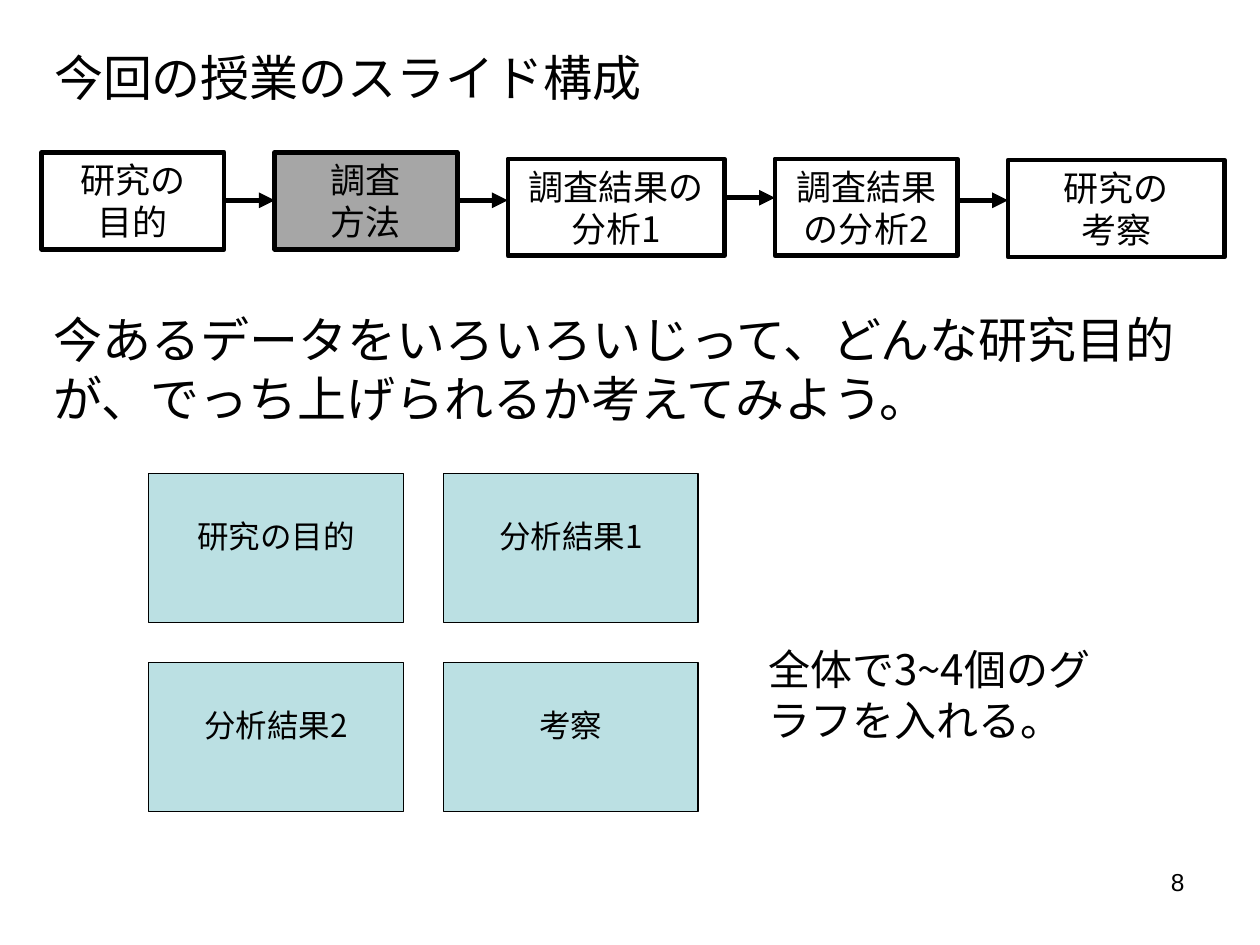
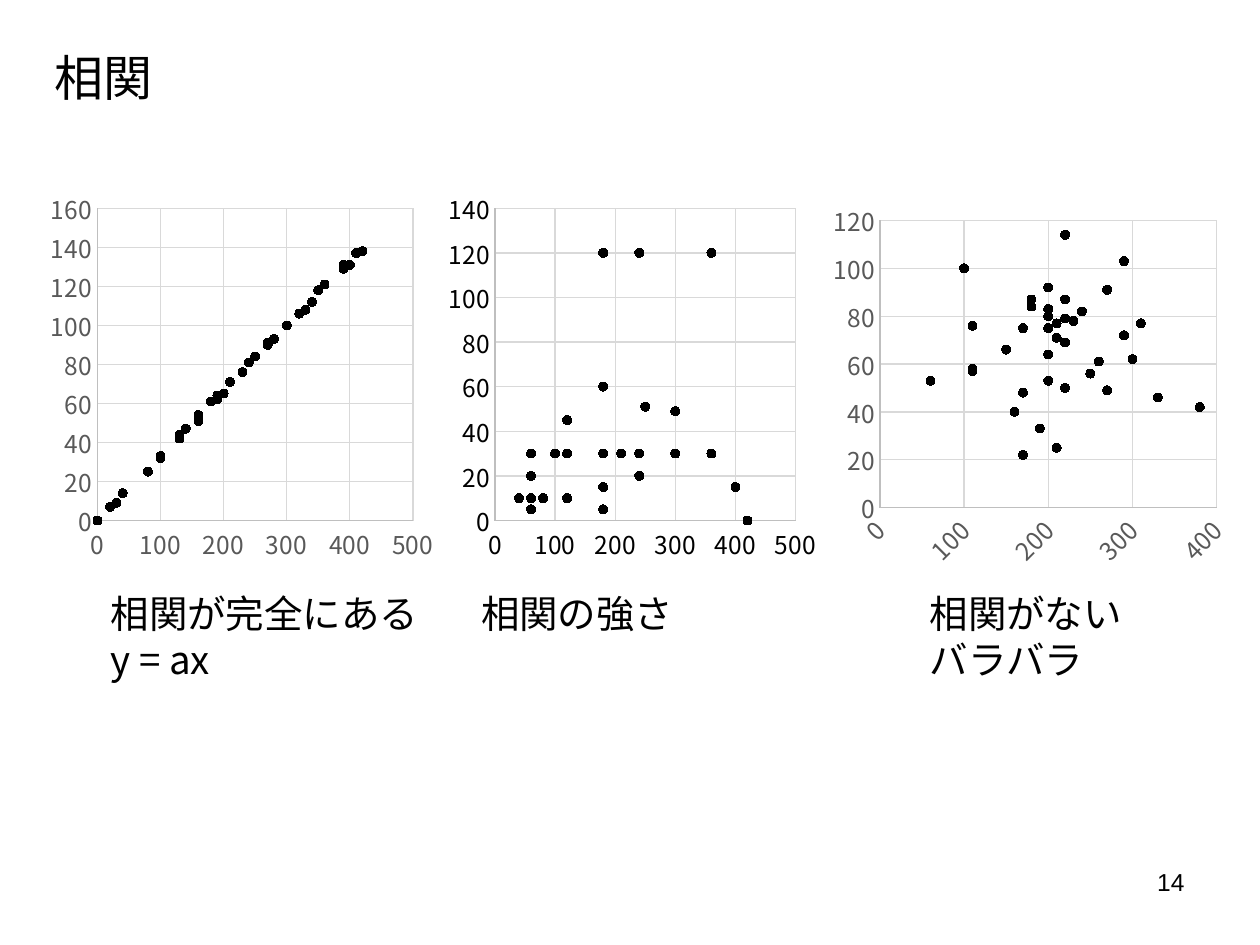
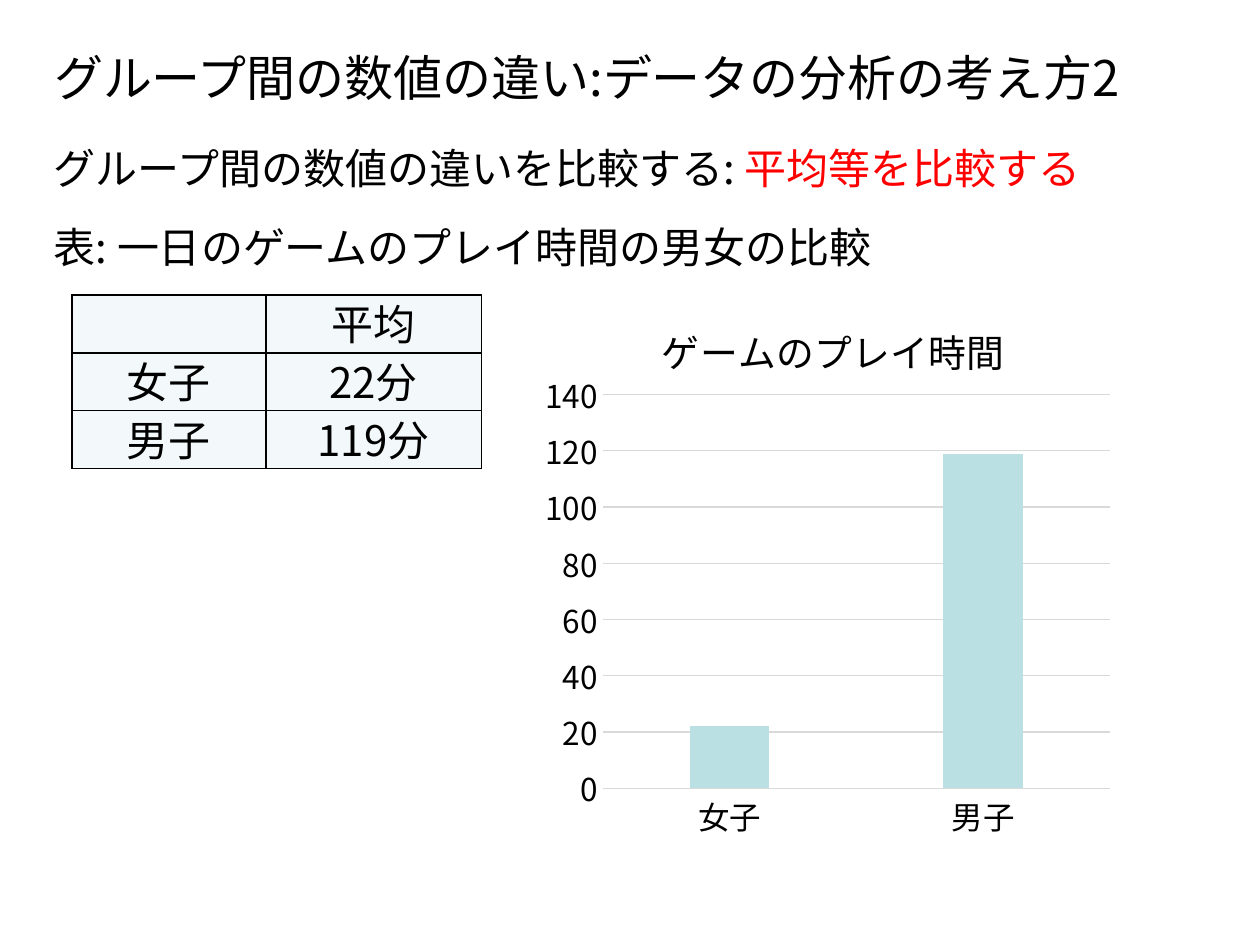
from lxml.etree import SubElement
from pptx import Presentation
from pptx.chart.data import CategoryChartData, XyChartData
from pptx.dml.color import RGBColor
from pptx.enum.chart import XL_CHART_TYPE, XL_MARKER_STYLE, XL_TICK_MARK
from pptx.enum.shapes import MSO_CONNECTOR, MSO_SHAPE
from pptx.enum.text import MSO_ANCHOR, MSO_AUTO_SIZE, PP_ALIGN
from pptx.oxml.ns import qn
from pptx.util import Inches, Pt

COLORS = {
    "ink": "000000",
    "red": "FF0000",
    "teal": "BBE0E3",
    "pale": "F3F9FA",
    "current": "A6A6A6",
    "label": "595959",
    "axis": "BFBFBF",
    "grid": "D9D9D9",
}
FONT = "Noto Sans CJK JP"
NUMBER_FONT = "Arial"
LINE_HEIGHT = 1.2
MARGIN = 0.33


def rgb(name):
    return RGBColor.from_string(COLORS[name])


def add_east_asian_fonts(element):
    """Give each Latin font in the element the same East Asian font."""
    for latin in list(element.iter(qn("a:latin"))):
        properties = latin.getparent()
        if properties.find(qn("a:ea")) is None:
            east_asian = SubElement(properties, qn("a:ea"))
            east_asian.set("typeface", latin.get("typeface"))
            latin.addnext(east_asian)


def set_layout(parent, x, y, width=None, height=None):
    """Place a chart part by fractions of the chart area."""
    for old in parent.findall(qn("c:layout")):
        parent.remove(old)
    layout = SubElement(parent, qn("c:layout"))
    manual = SubElement(layout, qn("c:manualLayout"))
    values = [("xMode", "edge"), ("yMode", "edge"), ("x", x), ("y", y)]
    if width is not None:
        values = [("layoutTarget", "inner")] + values + [("w", width), ("h", height)]
    for tag, value in values:
        SubElement(manual, qn("c:" + tag)).set("val", str(value))
    text = parent.find(qn("c:tx"))
    if text is None:
        parent.insert(0, layout)
    else:
        text.addnext(layout)


class Deck:
    def __init__(self):
        self.presentation = Presentation()
        self.presentation.slide_width = Inches(10)
        self.presentation.slide_height = Inches(7.5)
        self.slide = None

    def add_slide(self, title, number=None):
        self.slide = self.presentation.slides.add_slide(
            self.presentation.slide_layouts[5])
        shape = self.slide.shapes.title
        shape.left, shape.top = Inches(MARGIN), Inches(MARGIN)
        shape.width, shape.height = Inches(10), Inches(0.57)
        self.fill_frame(shape.text_frame, [title], 28)
        if number:
            self.text(7.17, 6.83, 2.33, 0.52, [number], 14,
                      align=PP_ALIGN.RIGHT, font=NUMBER_FONT)

    def style_font(self, font, size, color="ink", name=FONT):
        font.size = Pt(size)
        font.name = name
        font.color.rgb = rgb(color)

    def style_paragraph(self, paragraph, size, align, font=FONT):
        paragraph.alignment = align
        paragraph.line_spacing = Pt(size * LINE_HEIGHT)
        self.style_font(paragraph.font, size, name=font)
        add_east_asian_fonts(paragraph._p)

    def fill_frame(self, frame, lines, size, align=PP_ALIGN.LEFT,
                   anchor=MSO_ANCHOR.TOP, font=FONT):
        frame.word_wrap = True
        frame.auto_size = MSO_AUTO_SIZE.NONE
        frame.vertical_anchor = anchor
        for index, line in enumerate(lines):
            paragraph = frame.paragraphs[0] if index == 0 else frame.add_paragraph()
            paragraph.text = line
            self.style_paragraph(paragraph, size, align, font)

    def text(self, left, top, width, height, lines, size,
             align=PP_ALIGN.LEFT, font=FONT):
        shape = self.slide.shapes.add_textbox(
            Inches(left), Inches(top), Inches(width), Inches(height))
        self.fill_frame(shape.text_frame, lines, size, align, font=font)
        return shape.text_frame.paragraphs[0]

    def box(self, left, top, width, height, text, size, fill, line_width,
            anchor=MSO_ANCHOR.MIDDLE):
        shape = self.slide.shapes.add_shape(
            MSO_SHAPE.RECTANGLE, Inches(left), Inches(top),
            Inches(width), Inches(height))
        shape.shadow.inherit = False
        if fill:
            shape.fill.solid()
            shape.fill.fore_color.rgb = rgb(fill)
        else:
            shape.fill.background()
        shape.line.color.rgb = rgb("ink")
        shape.line.width = Pt(line_width)
        self.fill_frame(shape.text_frame, [text], size, PP_ALIGN.CENTER, anchor)
        return shape

    def arrow(self, start, end, y):
        connector = self.slide.shapes.add_connector(
            MSO_CONNECTOR.STRAIGHT, Inches(start), Inches(y), Inches(end), Inches(y))
        connector.line.color.rgb = rgb("ink")
        connector.line.width = Pt(3)
        SubElement(connector.line._get_or_add_ln(), qn("a:tailEnd")).set("type", "triangle")
        SubElement(connector._element.spPr, qn("a:effectLst"))

    def table(self, left, top, widths, row_height, rows):
        table = self.slide.shapes.add_table(
            len(rows), len(widths), Inches(left), Inches(top),
            Inches(sum(widths)), Inches(row_height * len(rows))).table
        for column, width in zip(table.columns, widths):
            column.width = Inches(width)
        for row_index, row in enumerate(rows):
            table.rows[row_index].height = Inches(row_height)
            for column_index, text in enumerate(row):
                self.cell(table.cell(row_index, column_index), text)

    def cell(self, cell, text):
        cell.margin_left = cell.margin_right = cell.margin_top = Inches(0.01)
        cell.margin_bottom = 0
        cell.vertical_anchor = MSO_ANCHOR.BOTTOM
        if text:
            paragraph = cell.text_frame.paragraphs[0]
            paragraph.text = text
            self.style_paragraph(paragraph, 24, PP_ALIGN.CENTER)
        properties = cell._tc.get_or_add_tcPr()
        for side in ("lnL", "lnR", "lnT", "lnB"):
            border = SubElement(properties, qn("a:" + side), w=str(Pt(1)))
            solid = SubElement(border, qn("a:solidFill"))
            SubElement(solid, qn("a:srgbClr"), val=COLORS["ink"])
        cell.fill.solid()
        cell.fill.fore_color.rgb = rgb("pale")

    def chart(self, kind, data, place, plot, size):
        chart = self.slide.shapes.add_chart(
            kind, *[Inches(length) for length in place], data).chart
        chart.has_legend = False
        chart.has_title = False
        self.style_font(chart.font, size)
        chart.plots[0].vary_by_categories = False
        set_layout(chart._chartSpace.chart.plotArea, *plot)
        return chart

    def axis(self, axis, size, label_color="ink", line=None, grid=True, angle=0):
        axis.major_tick_mark = axis.minor_tick_mark = XL_TICK_MARK.NONE
        self.style_font(axis.tick_labels.font, size, label_color)
        # Label angles are counted in 60000ths of a degree
        axis._element.txPr.bodyPr.set("rot", str(angle * 60000))
        if line:
            axis.format.line.color.rgb = rgb(line)
            axis.format.line.width = Pt(0.75)
        else:
            axis.format.line.fill.background()
        axis.has_major_gridlines = grid
        if grid:
            axis.major_gridlines.format.line.color.rgb = rgb("grid")
            axis.major_gridlines.format.line.width = Pt(0.75)

    def scatter(self, place, plot, label_color, x_values, y_values, angle=0):
        data = XyChartData()
        points = data.add_series("Series 1")
        for x, y in zip(x_values, y_values):
            points.add_data_point(x, y)
        chart = self.chart(XL_CHART_TYPE.XY_SCATTER, data, place, plot, 14)
        self.axis(chart.category_axis, 14, label_color, "axis", angle=angle)
        self.axis(chart.value_axis, 14, label_color, "axis")
        series = chart.plots[0].series[0]
        series.smooth = False
        series.format.line.fill.background()
        series.marker.style = XL_MARKER_STYLE.CIRCLE
        series.marker.size = 5
        series.marker.format.fill.solid()
        series.marker.format.fill.fore_color.rgb = rgb("ink")
        series.marker.format.line.color.rgb = rgb("ink")
        add_east_asian_fonts(chart._chartSpace)

    def columns(self, place, plot, title, categories, values):
        data = CategoryChartData()
        data.categories = categories
        data.add_series("Series 1", values)
        chart = self.chart(XL_CHART_TYPE.COLUMN_CLUSTERED, data, place, plot, 18)
        self.axis(chart.category_axis, 18, line="grid", grid=False)
        self.axis(chart.value_axis, 18)
        chart.plots[0].gap_width = 219
        chart.plots[0].overlap = -27
        series = chart.plots[0].series[0]
        series.format.fill.solid()
        series.format.fill.fore_color.rgb = rgb("teal")
        paragraph = chart.chart_title.text_frame.paragraphs[0]
        paragraph.text = title
        self.style_font(paragraph.font, 21.6)
        paragraph.font.bold = False
        set_layout(chart.chart_title._element, 0.19, 0.03)
        add_east_asian_fonts(chart._chartSpace)


def build_structure(deck):
    deck.add_slide("今回の授業のスライド構成", "8")

    # Flow of the presentation: left, top, width, text, fill
    steps = [
        (0.33, 1.21, 1.45, "研究の\n目的", None),
        (2.18, 1.21, 1.45, "調査\n方法", "current"),
        (4.03, 1.26, 1.72, "調査結果の分析1", None),
        (6.15, 1.26, 1.45, "調査結果の分析2", None),
        (8, 1.27, 1.72, "研究の\n考察", None),
    ]
    for left, top, width, text, fill in steps:
        deck.box(left, top, width, 0.77, text, 20, fill, 2.5)
    for step, following, y in zip(steps, steps[1:], (1.59, 1.59, 1.57, 1.59)):
        deck.arrow(step[0] + step[2], following[0], y)

    deck.text(MARGIN, 2.41, 9.25, 1.51,
              ["今あるデータをいろいろいじって、どんな研究目的が、でっち上げられるか考えてみよう。"], 28)

    # Grid of four slide sketches
    sketches = ["研究の目的", "分析結果1", "分析結果2", "考察"]
    for index, text in enumerate(sketches):
        row, column = divmod(index, 2)
        shape = deck.box(1.18 + 2.34 * column, 3.76 + 1.5 * row, 2.02, 1.18,
                         text, 18, "teal", 0.75, MSO_ANCHOR.TOP)
        shape.text_frame.margin_top = Inches(0.34)
    deck.text(6, 5.06, 2.8, 1.38, ["全体で3~4個のグラフを入れる。"], 24)


def build_correlation(deck):
    deck.add_slide("相関", "14")

    # Perfect correlation
    deck.scatter(
        (0.33, 1.47, 3.17, 3.06), (0.14, 0.06, 0.79, 0.81), "label",
        [30, 200, 270, 210, 20, 190, 180, 420, 30, 390, 100, 360, 410, 80, 160, 250,
         340, 270, 130, 270, 130, 40, 160, 320, 390, 0, 330, 300, 130, 280, 160, 190,
         140, 240, 400, 230, 160, 100, 350],
        [9, 65, 91, 71, 7, 62, 61, 138, 9, 129, 32, 121, 137, 25, 52, 84, 112, 90, 42,
         91, 44, 14, 52, 106, 131, 0, 108, 100, 42, 93, 54, 64, 47, 81, 131, 76, 51,
         33, 118])

    # Some correlation
    deck.scatter(
        (3.5, 1.47, 3.06, 3.06), (0.14, 0.06, 0.78, 0.81), "ink",
        [40, 60, 60, 60, 60, 80, 80, 100, 120, 120, 120, 120, 120, 120, 120, 120, 120,
         180, 180, 180, 180, 180, 180, 180, 210, 210, 240, 240, 240, 240, 250, 300,
         300, 300, 300, 360, 360, 400, 420],
        [10, 30, 20, 5, 10, 10, 10, 30, 45, 10, 30, 30, 10, 30, 10, 10, 45, 120, 5, 60,
         30, 15, 5, 15, 30, 30, 120, 30, 20, 120, 51, 30, 30, 30, 49, 30, 120, 15, 0])

    # No correlation
    deck.scatter(
        (6.56, 1.54, 3.26, 3), (0.13, 0.07, 0.82, 0.76), "label",
        [210, 270, 150, 260, 100, 380, 170, 170, 250, 210, 270, 310, 170, 220, 110, 200,
         200, 160, 240, 290, 180, 220, 200, 200, 220, 300, 110, 290, 180, 60, 330, 220,
         190, 230, 200, 110, 220, 210, 200],
        [25, 49, 66, 61, 100, 42, 75, 48, 56, 71, 91, 77, 22, 79, 58, 75, 64, 40, 82, 72,
         87, 50, 83, 53, 87, 62, 57, 103, 84, 53, 46, 114, 33, 78, 80, 76, 69, 77, 92],
        angle=-45)

    # Captions
    deck.text(0.78, 4.63, 2.72, 1.21, ["相関が完全にある", "y = ax"], 22)
    deck.text(3.72, 4.63, 2.83, 0.84, ["相関の強さ"], 22)
    deck.text(7.28, 4.63, 2.72, 1.21, ["相関がない\nバラバラ"], 22)


def build_comparison(deck):
    deck.add_slide("グループ間の数値の違い:データの分析の考え方2")
    paragraph = deck.text(MARGIN, 1.08, 8.88, 0.5,
                          ["グループ間の数値の違いを比較する: "], 24)
    run = paragraph.add_run()
    run.text = "平均等を比較する"
    run.font.color.rgb = rgb("red")
    deck.text(MARGIN, 1.71, 7.63, 0.5, ["表: 一日のゲームのプレイ時間の男女の比較"], 24)

    # The same averages as a table and as columns
    averages = {"女子": 22, "男子": 119}
    rows = [("", "平均")] + [(group, f"{value}分") for group, value in averages.items()]
    deck.table(0.57, 2.34, (1.54, 1.71), 0.46, rows)
    deck.columns((4.32, 2.34, 4.63, 4.4), (0.1, 0.18, 0.87, 0.71),
                 "ゲームのプレイ時間", list(averages), list(averages.values()))


def main():
    deck = Deck()
    build_structure(deck)
    build_correlation(deck)
    build_comparison(deck)
    deck.presentation.save("out.pptx")


if __name__ == "__main__":
    main()
